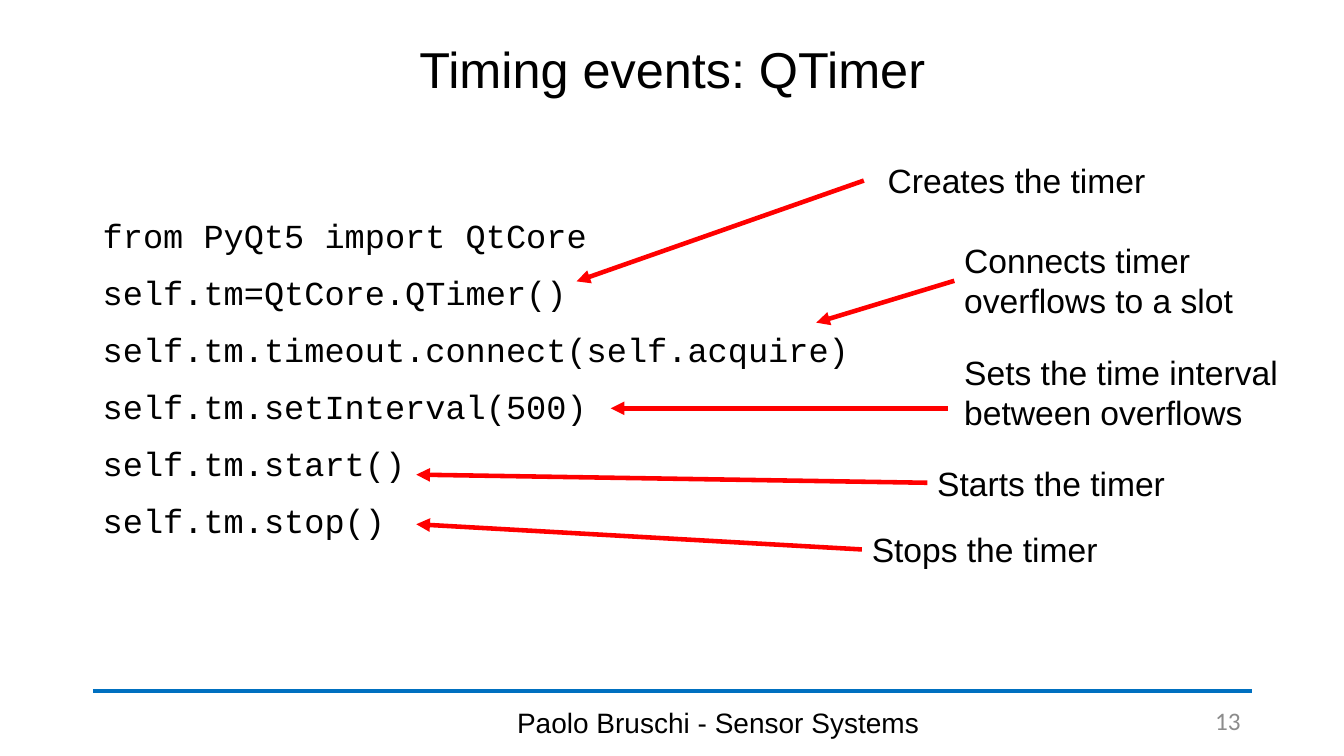
from lxml.etree import SubElement
from pptx import Presentation
from pptx.dml.color import RGBColor
from pptx.enum.shapes import MSO_CONNECTOR
from pptx.enum.text import MSO_ANCHOR, MSO_AUTO_SIZE, PP_ALIGN
from pptx.oxml.ns import qn
from pptx.util import Cm, Pt

BLACK = RGBColor(0, 0, 0)
GREY = RGBColor(0x8C, 0x8C, 0x8C)
BLUE = RGBColor(0, 0x70, 0xC0)
RED = RGBColor(0xFF, 0, 0)

CODE = [
    "from PyQt5 import QtCore",
    "self.tm=QtCore.QTimer()",
    "self.tm.timeout.connect(self.acquire)",
    "self.tm.setInterval(500)",
    "self.tm.start()",
    "self.tm.stop()",
]

# Each note: text, left, top, lines, arrow tip, free arrow start
NOTES = [
    ("Creates the timer", 12.12, 0, 1, (4.53, 3.19), (11.77, 0.65)),
    ("Connects timer overflows to a slot", 14.05, 2.02, 2, (10.57, 4.23), None),
    ("Sets the time interval between overflows", 14.05, 4.84, 2, (5.39, 6.39), (13.88, 6.39)),
    ("Starts the timer", 13.37, 7.63, 1, (0.49, 8.06), None),
    ("Stops the timer", 11.72, 9.31, 1, (0.49, 9.31), None),
]


def add_run(para, text, size, font="Arial", color=BLACK):
    run = para.add_run()
    run.text = text
    run.font.size = Pt(size)
    run.font.name = font
    run.font.color.rgb = color


def add_text(slide, box, lines, size, font="Arial", color=BLACK, after=0):
    shape = slide.shapes.add_textbox(*map(Cm, box))
    frame = shape.text_frame
    frame.word_wrap = True
    frame.auto_size = MSO_AUTO_SIZE.SHAPE_TO_FIT_TEXT
    for row, line in enumerate(lines):
        para = frame.add_paragraph() if row else frame.paragraphs[0]
        para.space_after = Pt(after)
        add_run(para, line, size, font, color)
    return shape


def add_line(slide, start, end, color, width):
    line = slide.shapes.add_connector(MSO_CONNECTOR.STRAIGHT, *map(Cm, start + end))
    line.line.color.rgb = color
    line.line.width = Pt(width)
    SubElement(line._element.spPr, qn("a:effectLst"))
    return line


def add_title(slide, box, text):
    title = slide.shapes.title
    title.left, title.top, title.width, title.height = map(Cm, box)
    frame = title.text_frame
    frame.vertical_anchor = MSO_ANCHOR.MIDDLE
    para = frame.paragraphs[0]
    para.alignment = PP_ALIGN.CENTER
    para.line_spacing = 0.9
    add_run(para, text, 36)


def add_code(slide, box):
    add_text(slide, box, CODE, 24, "Courier New", after=12)


def add_notes(slide, box):
    x, y, width, height = box
    for text, left, top, rows, tip, start in NOTES:
        place = (x + left, y + top, 8.92, 0.23 + 1.04 * rows)
        note = add_text(slide, place, [text], 24, after=12)
        dx, dy = start or (left, top + place[3] / 2)
        arrow = add_line(slide, (x + dx, y + dy), (x + tip[0], y + tip[1]), RED, 3.25)
        if not start:
            arrow.begin_connect(note, 1)
        SubElement(arrow.line._get_or_add_ln(), qn("a:tailEnd"), type="triangle")


def add_footer(slide, box, text, number):
    x, y, width, height = box
    add_line(slide, (x, y), (x + width, y), BLUE, 2.75)
    add_text(slide, (x + 10.44, y + 0.23, 10.72, 1.12), [text], 20)
    page = add_text(slide, (x + width - 2.47, y + 0.23, 2.44, 1.02), [number], 18, "Calibri", GREY)
    page.text_frame.auto_size = MSO_AUTO_SIZE.NONE
    page.text_frame.vertical_anchor = MSO_ANCHOR.MIDDLE
    page.text_frame.paragraphs[0].alignment = PP_ALIGN.RIGHT


def main():
    deck = Presentation()
    deck.slide_width, deck.slide_height = Cm(33.87), Cm(19.05)
    slide = deck.slides.add_slide(deck.slide_layouts[5])
    add_footer(slide, (2.34, 17.42, 29.21, 1.4), "Paolo Bruschi - Sensor Systems", "13")
    add_title(slide, (2.34, 0.91, 29.21, 1.83), "Timing events: QTimer")
    add_code(slide, (2.34, 5.28, 19.81, 8.56))
    add_notes(slide, (10, 3.9, 23, 10.6))
    deck.save("out.pptx")


if __name__ == "__main__":
    main()
